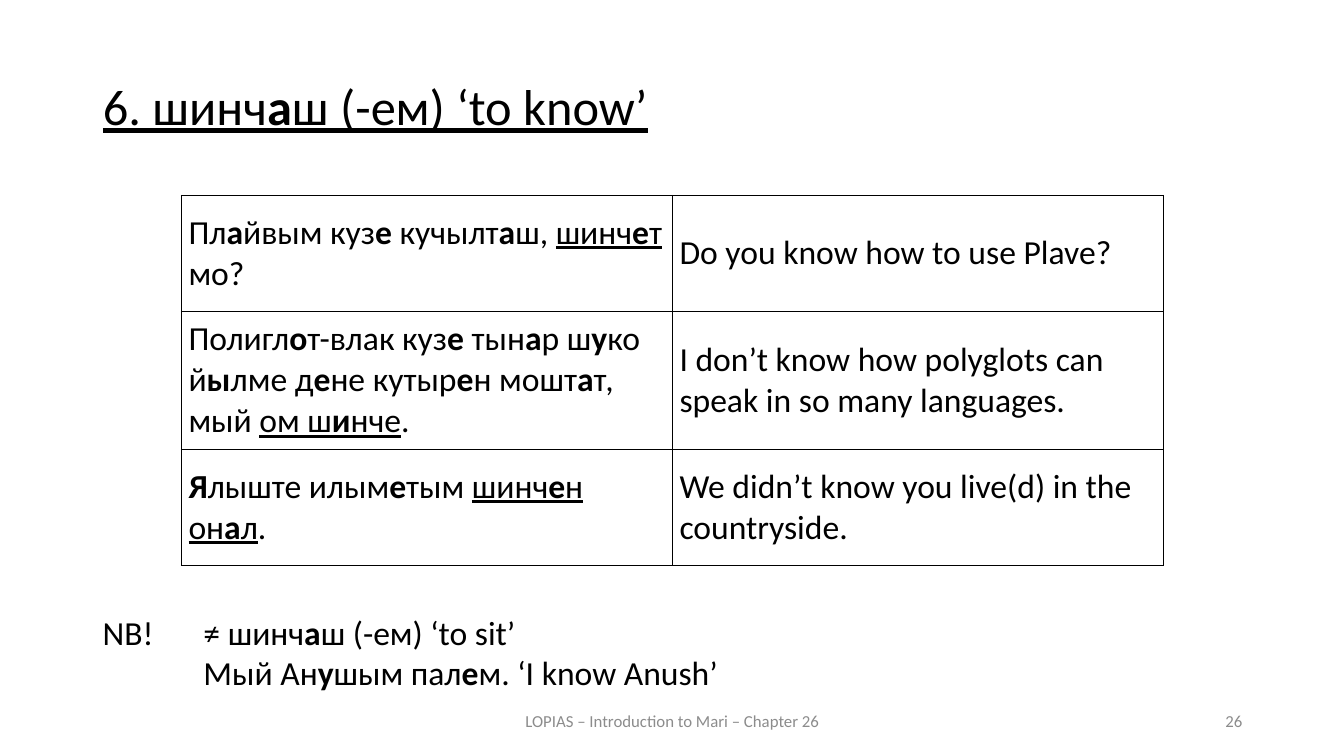
from dataclasses import dataclass

from lxml.etree import SubElement
from pptx import Presentation
from pptx.dml.color import RGBColor
from pptx.enum.text import MSO_ANCHOR, MSO_AUTO_SIZE, PP_ALIGN
from pptx.oxml.ns import qn
from pptx.util import Pt

PX = 9144


@dataclass(frozen=True)
class Theme:
    """Colours, font and type sizes of the deck."""
    font: str = "Calibri"
    ink: str = "000000"
    muted: str = "8C8C8C"
    title: int = 36
    body: int = 24
    footer: int = 12
    border: int = 1


THEME = Theme()
TITLE = "_6. шинч*а*ш (-ем) ‘to know’_"
EXAMPLES = [
    ("Пл*а*йвым куз*е* кучылт*а*ш, _шинч*е*т_ мо?",
     "Do you know how to use Plave?"),
    ("Полигл*о*т-влак куз*е* тын*а*р ш*у*ко й*ы*лме д*е*не кутыр*е*н мошт*а*т, мый _ом ш*и*нче_.",
     "I don’t know how polyglots can speak in so many languages."),
    ("*Я*лыште илым*е*тым _шинч*е*н он*а*л_.",
     "We didn’t know you live(d) in the countryside."),
]
ROW_HEIGHTS = (115, 137, 115)
NOTES = [("NB!\t≠ шинч*а*ш (-ем) ‘to sit’", -100),
         ("Мый Ан*у*шым пал*е*м. ‘I know Anush’", 0)]
FOOTER = "LOPIAS – Introduction to Mari – Chapter 26"
PAGE_NUMBER = "26"


def scaled(*lengths):
    """Turn px lengths into EMU."""
    return [length * PX for length in lengths]


def apply(target, formats):
    """Set each named attribute on the target."""
    for name, value in formats.items():
        setattr(target, name, value)


def write(para, marked, size, color=THEME.ink):
    """Add spans to a paragraph: *bold* and _underlined_."""
    for line_index, stretch in enumerate(marked.split("_")):
        for bold_index, words in enumerate(stretch.split("*")):
            if words:
                span = para.add_run()
                span.text = words
                apply(span.font, {"name": THEME.font, "size": Pt(size),
                                  "bold": bold_index % 2 == 1,
                                  "underline": line_index % 2 == 1})
                span.font.color.rgb = RGBColor.from_string(color)


def draw_borders(cell):
    """Rule all four sides of a table cell."""
    properties = cell._tc.get_or_add_tcPr()
    for position, side in enumerate(("lnL", "lnR", "lnT", "lnB")):
        line = SubElement(properties, qn(f"a:{side}"), w=str(Pt(THEME.border)))
        fill = SubElement(line, qn("a:solidFill"))
        SubElement(fill, qn("a:srgbClr"), val=THEME.ink)
        properties.insert(position, line)


def add_title(page, box):
    """Place the underlined heading in the title placeholder."""
    title = page.shapes.title
    apply(title, dict(zip(("left", "top", "width", "height"), scaled(*box))))
    apply(title.text_frame, {"vertical_anchor": MSO_ANCHOR.TOP, "word_wrap": True,
                             "auto_size": MSO_AUTO_SIZE.NONE})
    para = title.text_frame.paragraphs[0]
    apply(para, {"alignment": PP_ALIGN.JUSTIFY, "line_spacing": 0.9})
    write(para, TITLE, THEME.title)


def add_examples(page, box):
    """Place the table of sentences and translations."""
    table = page.shapes.add_table(len(EXAMPLES), 2, *scaled(*box)).table
    apply(table, {"first_row": False, "horz_banding": False})
    for column in table.columns:
        column.width = box[2] * PX // 2
    for row, height, sentences in zip(table.rows, ROW_HEIGHTS, EXAMPLES):
        row.height = height * PX
        for cell, sentence in zip(row.cells, sentences):
            apply(cell, {"vertical_anchor": MSO_ANCHOR.MIDDLE,
                         "margin_left": 7 * PX, "margin_right": 7 * PX,
                         "margin_top": 0, "margin_bottom": 0})
            cell.fill.background()
            draw_borders(cell)
            write(cell.text_frame.paragraphs[0], sentence, THEME.body)


def add_notes(page, box):
    """Place the NB lines with a hanging label."""
    frame = page.shapes.add_textbox(*scaled(*box)).text_frame
    frame.word_wrap = True
    for index, (note, indent) in enumerate(NOTES):
        para = frame.add_paragraph() if index else frame.paragraphs[0]
        properties = para._p.get_or_add_pPr()
        properties.set("marL", str(100 * PX))
        properties.set("indent", str(indent * PX))
        write(para, note, THEME.body)


def add_footer(page, box, words, alignment):
    """Place one muted footer text."""
    frame = page.shapes.add_textbox(*scaled(*box)).text_frame
    apply(frame, {"word_wrap": True, "vertical_anchor": MSO_ANCHOR.MIDDLE})
    para = frame.paragraphs[0]
    para.alignment = alignment
    write(para, words, THEME.footer, THEME.muted)


def main():
    """Build and save the deck."""
    deck = Presentation()
    apply(deck, {"slide_width": 1333 * PX, "slide_height": 750 * PX})
    page = deck.slides.add_slide(deck.slide_layouts.get_by_name("Title Only"))
    add_title(page, (92, 76, 1150, 83))
    add_examples(page, (180, 194, 974, sum(ROW_HEIGHTS)))
    add_notes(page, (92, 602, 667, 91))
    add_footer(page, (442, 695, 450, 40), FOOTER, PP_ALIGN.CENTER)
    add_footer(page, (942, 695, 300, 40), PAGE_NUMBER, PP_ALIGN.RIGHT)
    deck.save("out.pptx")


if __name__ == "__main__":
    main()
